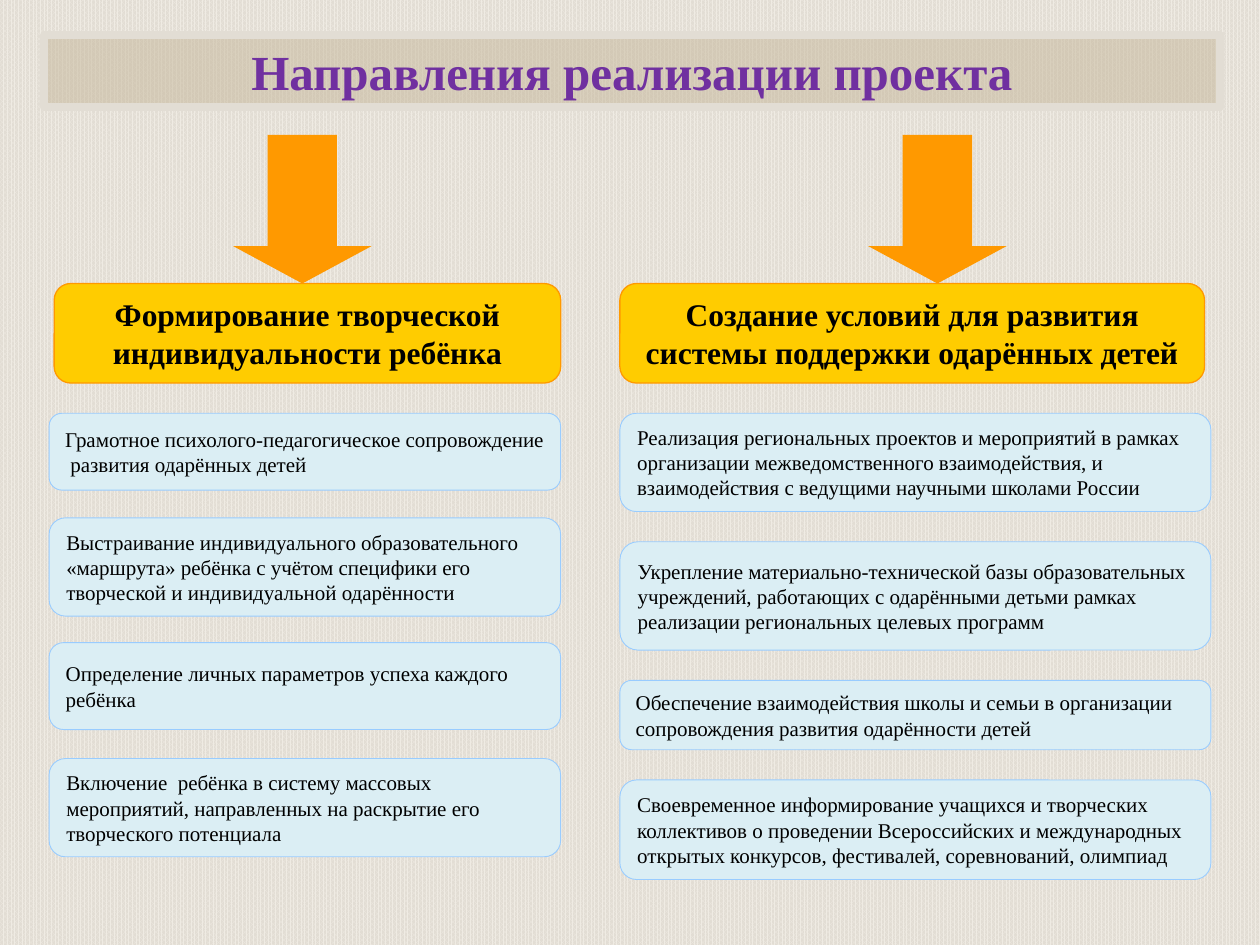
from lxml.etree import SubElement
from pptx import Presentation
from pptx.dml.color import RGBColor
from pptx.enum.dml import MSO_PATTERN
from pptx.enum.shapes import MSO_SHAPE as Kind
from pptx.enum.text import MSO_ANCHOR as Anchor, PP_ALIGN as Align
from pptx.oxml.ns import qn
from pptx.util import Inches, Pt


def rgb(code):
    return RGBColor.from_string(code)


def add(kind, box, fill, edge=None, width=0, text="", align=Align.LEFT, color="000000", font=None):
    shape = slide.shapes.add_shape(kind, *map(Inches, box))
    shape.shadow.inherit = False
    shape.fill.solid()
    shape.fill.fore_color.rgb = rgb(fill)
    if edge:
        shape.line.color.rgb = rgb(edge)
        shape.line.width = Pt(width)
    else:
        shape.line.fill.background()
    if text:
        frame = shape.text_frame
        frame.word_wrap = True
        frame.vertical_anchor = Anchor.MIDDLE
        para = frame.paragraphs[0]
        para.alignment = align
        run = para.add_run()
        run.text = text
        for name, value in {"name": "Times New Roman", **font}.items():
            setattr(run.font, name, value)
        run.font.color.rgb = rgb(color)
    return shape


deck = Presentation()
deck.slide_width, deck.slide_height = Inches(10), Inches(7.5)
slide = deck.slides.add_slide(deck.slide_layouts[6])

# Woven background
back = slide.background.fill
back.patterned()
back.pattern = MSO_PATTERN.PERCENT_80
back.fore_color.rgb = rgb("EFEBE3")
back.back_color.rgb = rgb("E2DDD4")

# Text formats
title_font = {"size": Pt(28), "bold": True}
head_font = {"size": Pt(18), "bold": True}
item_font = {"size": Pt(12), "bold": False}

# Title band, half transparent
band = add(Kind.RECTANGLE, (0.35, 0.28, 9.33, 0.57), "C5B699", "E2DDD4", 4.5,
           "Направления реализации проекта", Align.CENTER, "7030A0", title_font)
tint = band.fill._xPr.find(qn("a:solidFill"))[0]
SubElement(tint, qn("a:alpha")).set("val", "50000")

# Columns: arrow left, heading left and width, heading, items left and width, items (top, height, text)
columns = [
    (1.85, 0.43, 4.02, "Формирование творческой индивидуальности ребёнка", 0.39, 4.06, [
        (3.28, 0.61, "Грамотное психолого-педагогическое сопровождение  развития одарённых детей"),
        (4.11, 0.78, "Выстраивание индивидуального образовательного «маршрута» ребёнка "
                     "с учётом специфики его творческой и индивидуальной одарённости"),
        (5.1, 0.69, "Определение личных параметров успеха каждого ребёнка"),
        (6.02, 0.78, "Включение  ребёнка в систему массовых мероприятий, "
                     "направленных на раскрытие его творческого потенциала"),
    ]),
    (6.89, 4.92, 4.64, "Создание условий для развития системы поддержки одарённых детей", 4.92, 4.69, [
        (3.28, 0.78, "Реализация региональных проектов и мероприятий в рамках организации "
                     "межведомственного взаимодействия, и взаимодействия с ведущими "
                     "научными школами России"),
        (4.3, 0.86, "Укрепление материально-технической базы образовательных учреждений, "
                    "работающих с одарёнными детьми рамках реализации региональных "
                    "целевых программ"),
        (5.4, 0.55, "Обеспечение взаимодействия школы и семьи в организации "
                    "сопровождения развития одарённости детей"),
        (6.19, 0.79, "Своевременное информирование учащихся и творческих коллективов "
                     "о проведении Всероссийских и международных открытых конкурсов, "
                     "фестивалей, соревнований, олимпиад"),
    ]),
]

for tip, left, wide, head, edge, span, items in columns:
    # Arrow from the title to the heading
    arrow = add(Kind.DOWN_ARROW, (tip, 1.07, 1.1, 1.18), "FF9900")
    arrow.adjustments[1] = 0.27
    # Heading
    add(Kind.ROUNDED_RECTANGLE, (left, 2.25, wide, 0.79), "FFCC00", "FF9900", 0.75,
        head, Align.CENTER, font=head_font)
    # Items
    for top, high, text in items:
        add(Kind.ROUNDED_RECTANGLE, (edge, top, span, high), "DBEEF4", "99CCFF", 0.5,
            text, font=item_font)

deck.save("out.pptx")
